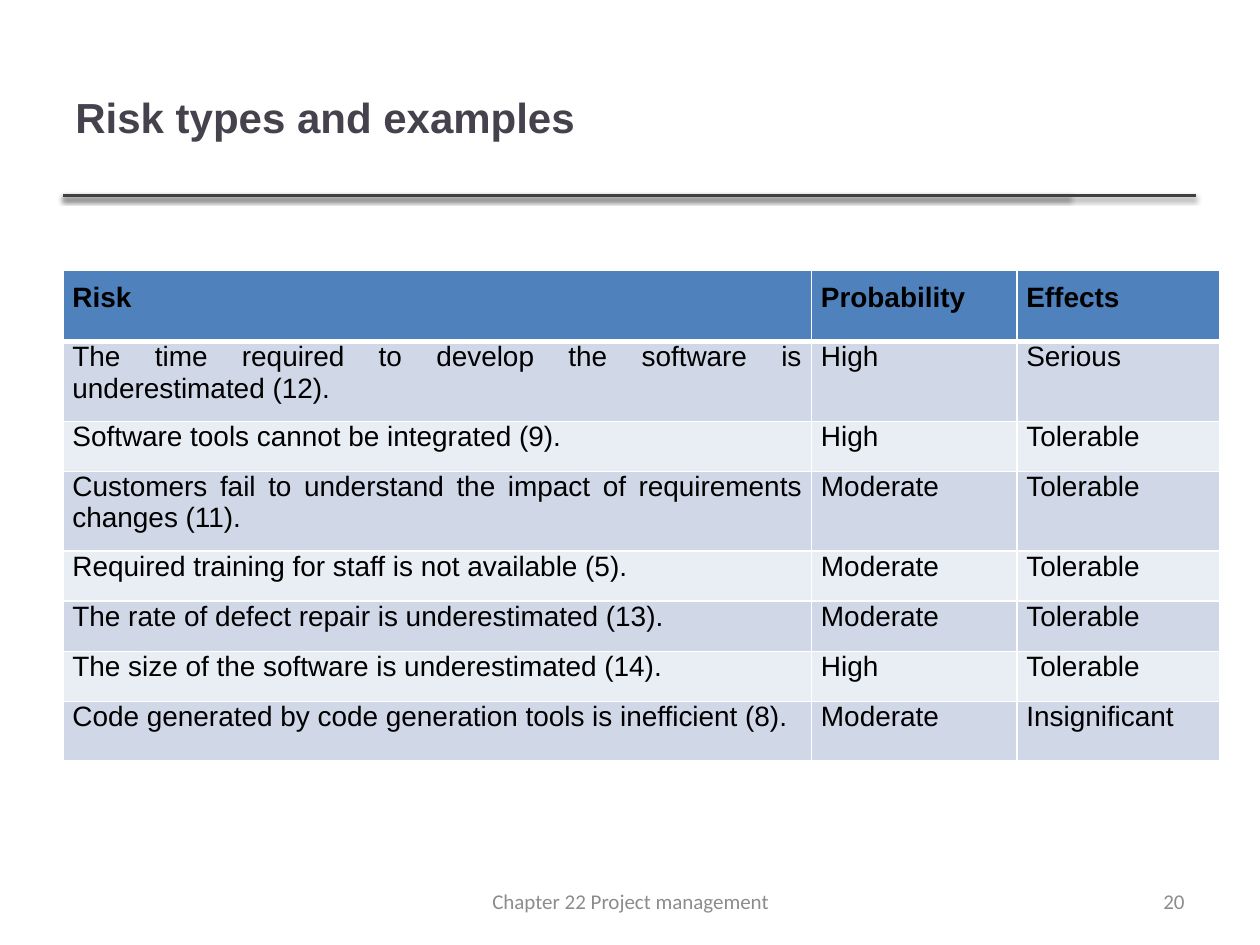
from dataclasses import dataclass

from lxml import etree
from pptx import Presentation
from pptx import util as u
from pptx.dml.color import RGBColor
from pptx.enum import shapes, text
from pptx.oxml import parse_xml
from pptx.oxml.ns import nsdecls, qn

COLOURS = {
    "title": "46424D", "rule": "404040", "footer": "8C8C8C", "body": "000000",
    "header": "4F81BD", "odd": "D0D8E8", "even": "E9EDF4", "border": "FFFFFF",
}
LEFT = 1.27
RULE_TOP = 3.94
COLUMN_WIDTHS = (15.09, 4.14, 4.09)
ROW_HEIGHTS = (1.44, 1.5, 1.01, 1.5, 1.01, 1.01, 1.01, 1.2)


@dataclass
class Style:
    font: str
    size: float
    colour: str
    bold: bool = False


@dataclass
class Label:
    words: str
    left: float
    top: float
    width: float
    height: float
    align: text.PP_ALIGN
    style: Style


@dataclass
class Risk:
    risk: str
    probability: str
    effects: str


FOOTER = Style("Calibri", 12, "footer")
LABELS = [
    Label("Risk types and examples", LEFT, 0.76, 20.27, 3.18,
          text.PP_ALIGN.LEFT, Style("Arial", 24, "title", True)),
    Label("Chapter 22 Project management", 8.69, 17.65, 8.05, 1.02,
          text.PP_ALIGN.CENTER, FOOTER),
    Label("20", 18.21, 17.65, 5.92, 1.02, text.PP_ALIGN.RIGHT, FOOTER),
]
RISKS = [
    Risk("Risk", "Probability", "Effects"),
    Risk("The time required to develop the software is underestimated (12).",
         "High", "Serious"),
    Risk("Software tools cannot be integrated (9).", "High", "Tolerable"),
    Risk("Customers fail to understand the impact of requirements changes (11).",
         "Moderate", "Tolerable"),
    Risk("Required training for staff is not available (5).", "Moderate", "Tolerable"),
    Risk("The rate of defect repair is underestimated (13).", "Moderate", "Tolerable"),
    Risk("The size of the software is underestimated (14).", "High", "Tolerable"),
    Risk("Code generated by code generation tools is inefficient (8).",
         "Moderate", "Insignificant"),
]


def rgb(name: str) -> RGBColor:
    return RGBColor.from_string(COLOURS[name])


def write(frame, words: str, align: text.PP_ALIGN, style: Style) -> None:
    para = frame.paragraphs[0]
    para.alignment = align
    span = para.add_run()
    span.text = words
    span.font.name = style.font
    span.font.size = u.Pt(style.size)
    span.font.bold = style.bold
    span.font.color.rgb = rgb(style.colour)


def add_label(page, label: Label) -> None:
    box = page.shapes.add_textbox(u.Cm(label.left), u.Cm(label.top),
                                  u.Cm(label.width), u.Cm(label.height))
    frame = box.text_frame
    frame.word_wrap = True
    frame.vertical_anchor = text.MSO_ANCHOR.MIDDLE
    write(frame, label.words, label.align, label.style)


def add_rule(page, right: float) -> None:
    rule = page.shapes.add_connector(shapes.MSO_CONNECTOR.STRAIGHT, u.Cm(LEFT),
                                     u.Cm(RULE_TOP), u.Cm(right), u.Cm(RULE_TOP))
    rule.line.color.rgb = rgb("rule")
    rule.line.width = u.Pt(2)
    # Soft shadow straight below the rule
    rule.element.spPr.append(parse_xml(
        f'<a:effectLst {nsdecls("a")}><a:outerShdw blurRad="{u.Pt(3.1)}" '
        f'dist="{u.Pt(1.6)}" dir="5400000" rotWithShape="0">'
        '<a:srgbClr val="000000"><a:alpha val="38000"/></a:srgbClr>'
        '</a:outerShdw></a:effectLst>'))


def set_borders(cell, widths: dict[str, float]) -> None:
    properties = cell._tc.get_or_add_tcPr()
    for index, (side, width) in enumerate(widths.items()):
        line = etree.Element(qn(f"a:ln{side}"), w=str(u.Pt(width)))
        fill = etree.SubElement(line, qn("a:solidFill"))
        etree.SubElement(fill, qn("a:srgbClr"), val=COLOURS["border"])
        properties.insert(index, line)


def fill_cell(cell, words: str, row: int) -> None:
    header = row == 0
    cell.margin_left = cell.margin_right = u.Cm(0.19)
    cell.margin_top = u.Cm(0.25 if header else 0)
    cell.margin_bottom = u.Cm(0.25)
    cell.fill.solid()
    cell.fill.fore_color.rgb = rgb("header" if header else "odd" if row % 2 else "even")
    set_borders(cell, {"L": 1, "R": 1, "T": 3 if row == 1 else 1, "B": 3 if header else 1})
    write(cell.text_frame, words, text.PP_ALIGN.JUSTIFY, Style("Arial", 16, "body", header))


def add_risk_table(page, risks: list[Risk]) -> None:
    table = page.shapes.add_table(
        len(risks), len(COLUMN_WIDTHS), u.Cm(LEFT), u.Cm(5.45),
        u.Cm(sum(COLUMN_WIDTHS)), u.Cm(sum(ROW_HEIGHTS))).table
    for column, width in zip(table.columns, COLUMN_WIDTHS):
        column.width = u.Cm(width)
    for row, (risk, height) in enumerate(zip(risks, ROW_HEIGHTS)):
        table.rows[row].height = u.Cm(height)
        for column, words in enumerate((risk.risk, risk.probability, risk.effects)):
            fill_cell(table.cell(row, column), words, row)


def main() -> None:
    deck = Presentation()
    deck.slide_width, deck.slide_height = u.Cm(25.4), u.Cm(19.05)
    page = deck.slides.add_slide(deck.slide_layouts[6])

    # Two overlapping rules under the title
    for right in (21.56, 24.1):
        add_rule(page, right)

    # Title, footer and page number
    for label in LABELS:
        add_label(page, label)

    # Risks with their probability and effects
    add_risk_table(page, RISKS)
    deck.save("out.pptx")


if __name__ == "__main__":
    main()
